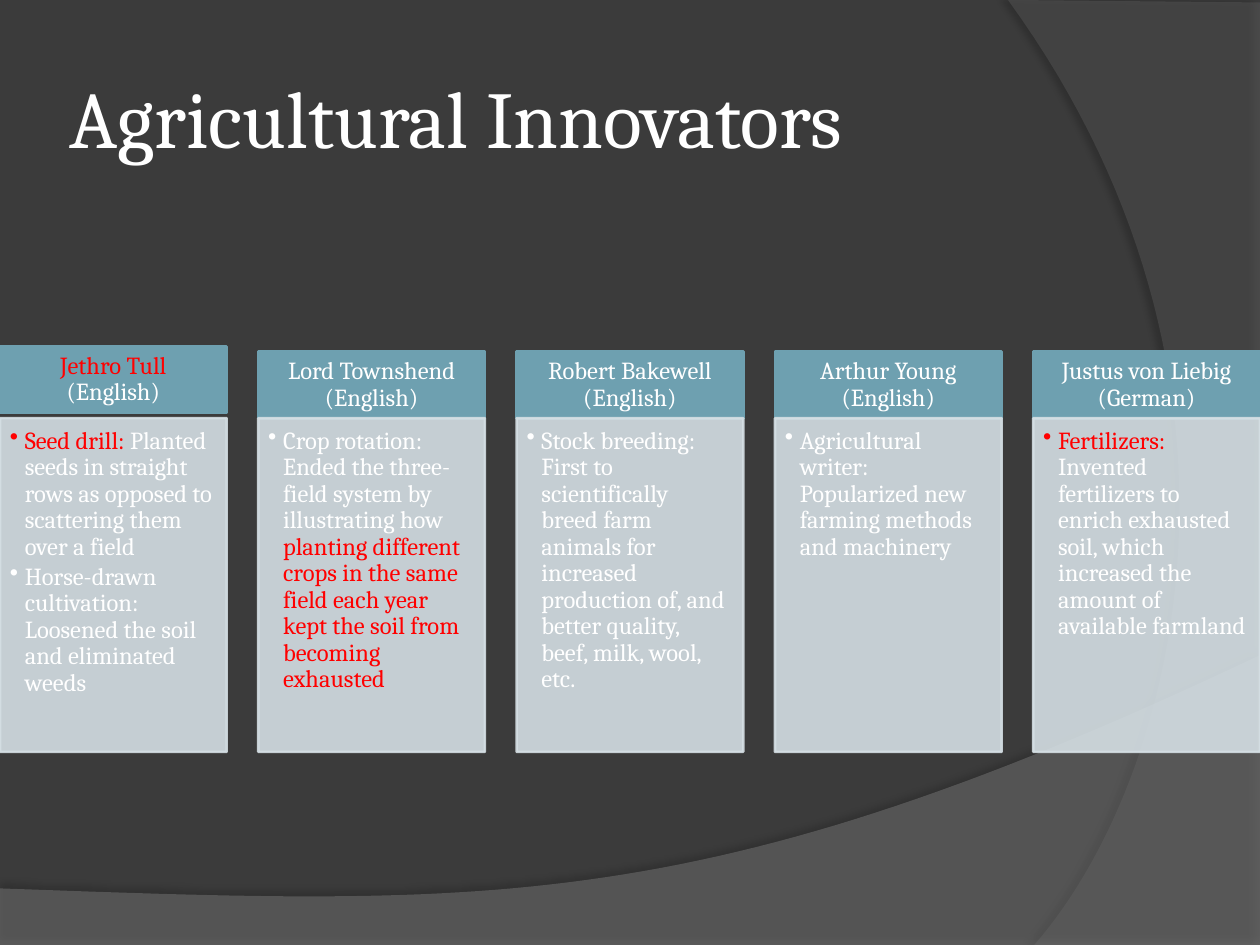
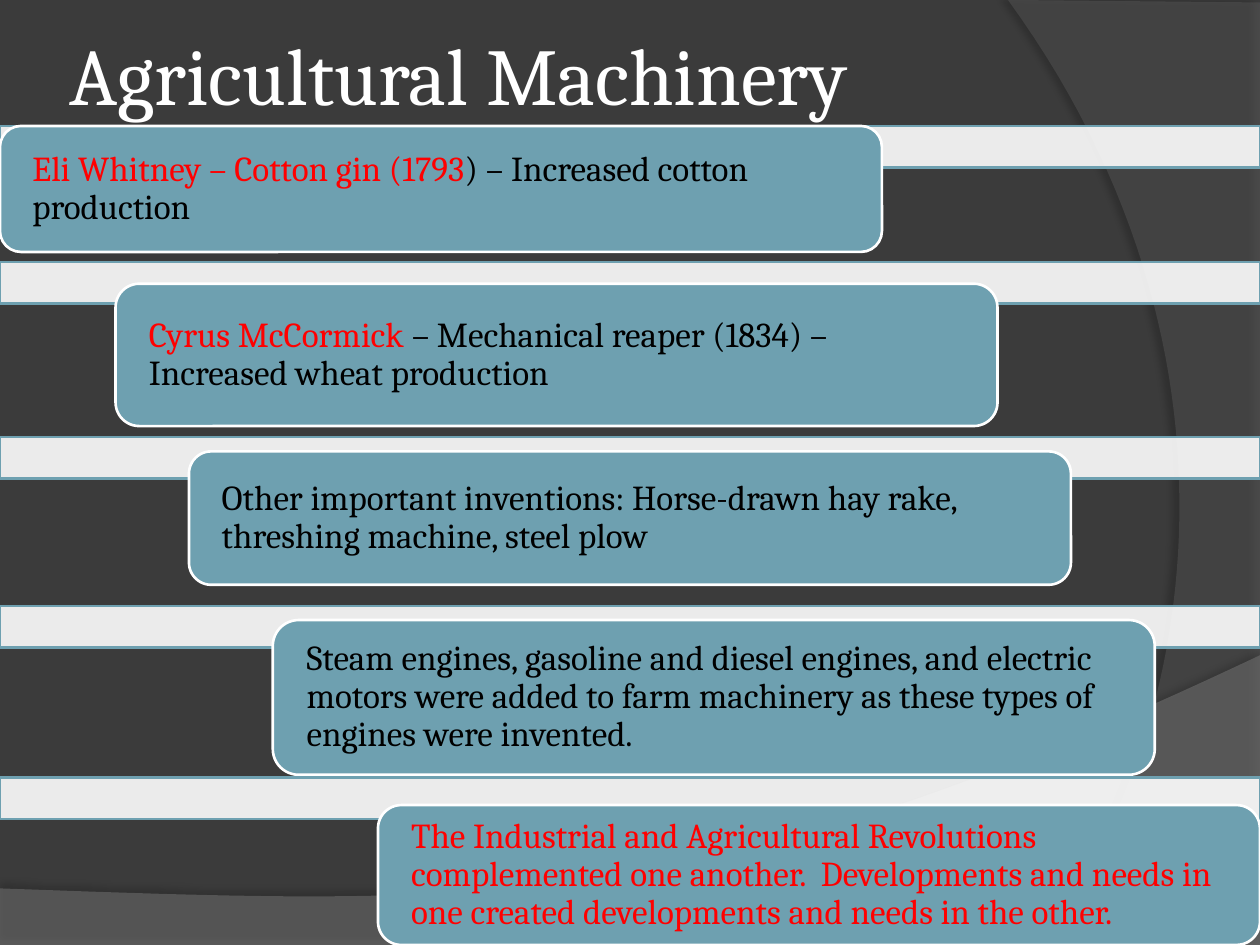
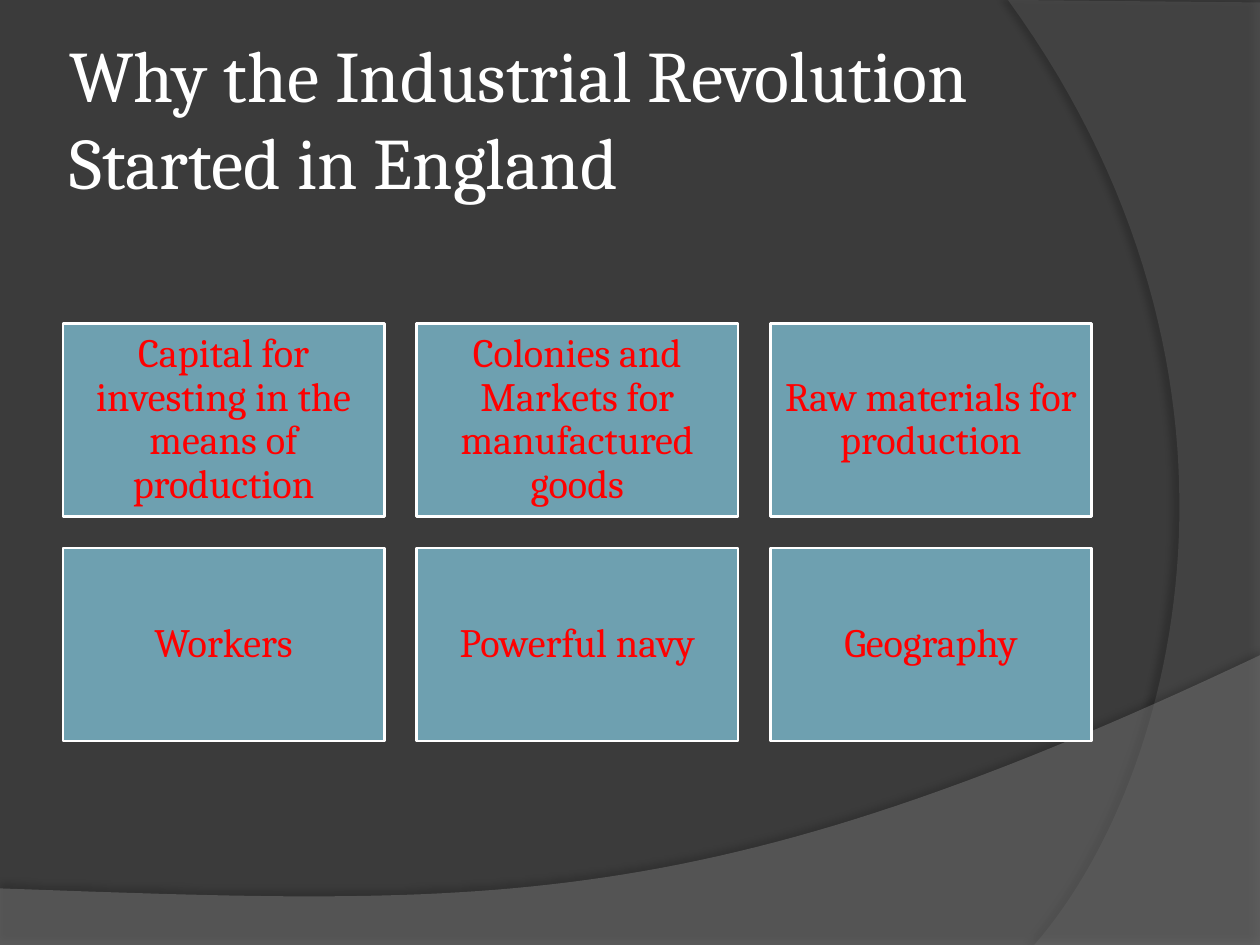
import pptx
import pptx.util
import pptx.dml.color
import pptx.enum.shapes
import pptx.enum.text
import pptx.oxml
import pptx.oxml.ns
from lxml import etree

Cm, Pt = pptx.util.Cm, pptx.util.Pt
RGB = pptx.dml.color.RGBColor
SHAPE = pptx.enum.shapes.MSO_SHAPE
ALIGN = pptx.enum.text.PP_ALIGN
ANCHOR = pptx.enum.text.MSO_ANCHOR
qn = pptx.oxml.ns.qn

FONT = "Cambria"
WIDTH, HEIGHT = 25.4, 19.05
COLORS = {
    "back": "3B3B3B", "wave": "7F7F7F", "arc": "5E5E5E", "shadow": "000000",
    "teal": "6EA0B0", "pale": "D5DFE4",
    "white": "FFFFFF", "black": "000000", "red": "FF0000",
}


def bezier(p0, p1, p2, p3, steps=60):
    """Points along a cubic curve, without its start."""
    points = []
    for i in range(1, steps + 1):
        t = i / steps
        weights = ((1 - t) ** 3, 3 * t * (1 - t) ** 2, 3 * t ** 2 * (1 - t), t ** 3)
        points.append(tuple(sum(w * p[axis] for w, p in zip(weights, (p0, p1, p2, p3)))
                            for axis in (0, 1)))
    return points


class Deck:
    def __init__(self):
        self.prs = pptx.Presentation()
        self.prs.slide_width, self.prs.slide_height = Cm(WIDTH), Cm(HEIGHT)
        self.s = None
        fill = self.prs.slide_master.background.fill
        fill.solid()
        fill.fore_color.rgb = self.rgb("back")

    def rgb(self, name):
        return RGB.from_string(COLORS[name])

    def set_alpha(self, fill_parent, percent):
        color = fill_parent.find(qn("a:solidFill"))[0]
        etree.SubElement(color, qn("a:alpha"), val=str(percent * 1000))

    def slide(self, title, top=0.76, height=3.18, size=46):
        self.s = self.prs.slides.add_slide(self.prs.slide_layouts[5])
        sp = self.s.shapes.title
        sp.left, sp.top, sp.width, sp.height = Cm(1.27), Cm(top), Cm(20.75), Cm(height)
        sp.text_frame.auto_size = pptx.enum.text.MSO_AUTO_SIZE.NONE
        self.frame(sp, (0.13,) * 4, ANCHOR.MIDDLE)
        self.paragraph(sp.text_frame.paragraphs[0], [(title, "white")], size, ALIGN.LEFT, 1)

    def master_swoosh(self, points, color, alpha, shadow_alpha, distance, direction):
        """Draws a shadowed outline and moves it to the slide master."""
        emu = [(Cm(x), Cm(y)) for x, y in points]
        builder = self.s.shapes.build_freeform(*emu[0])
        builder.add_line_segments(emu[1:], close=True)
        sp = builder.convert_to_shape()
        self.paint(sp, color, alpha=alpha)
        effects = sp.element.spPr.find(qn("a:effectLst"))
        shadow = etree.SubElement(effects, qn("a:outerShdw"), blurRad=str(Pt(4)),
                                  dist=str(Pt(distance)), dir=str(direction * 60000),
                                  algn="ctr", rotWithShape="0")
        tint = etree.SubElement(shadow, qn("a:srgbClr"), val=COLORS["shadow"])
        etree.SubElement(tint, qn("a:alpha"), val=str(shadow_alpha * 1000))
        self.prs.slide_master.shapes.element.insert_element_before(sp.element, "p:sp")

    def paint(self, sp, fill, line=None, alpha=None, line_alpha=None):
        sp.shadow.inherit = False
        sp.fill.solid()
        sp.fill.fore_color.rgb = self.rgb(fill)
        if alpha:
            self.set_alpha(sp.element.spPr, alpha)
        if line is None:
            sp.line.fill.background()
            return
        sp.line.color.rgb = self.rgb(line)
        sp.line.width = Pt(1.5)
        if line_alpha:
            self.set_alpha(sp.element.spPr.find(qn("a:ln")), line_alpha)

    def box(self, x, y, w, h, fill, line, alpha=None, line_alpha=None, kind=SHAPE.RECTANGLE):
        sp = self.s.shapes.add_shape(kind, Cm(x), Cm(y), Cm(w), Cm(h))
        self.paint(sp, fill, line, alpha, line_alpha)
        return sp

    def frame(self, sp, insets, anchor):
        tf = sp.text_frame
        tf.word_wrap = True
        tf.vertical_anchor = anchor
        tf.margin_left, tf.margin_top, tf.margin_right, tf.margin_bottom = map(Cm, insets)

    def paragraph(self, p, runs, size, align, spacing=0.9):
        p.alignment = align
        p.line_spacing = spacing
        for text, color in runs:
            r = p.add_run()
            r.text = text
            r.font.name, r.font.size = FONT, Pt(size)
            r.font.color.rgb = self.rgb(color)

    def label(self, sp, runs, size, insets, align=ALIGN.CENTER):
        self.frame(sp, insets, ANCHOR.MIDDLE)
        self.paragraph(sp.text_frame.paragraphs[0], runs, size, align)

    def bullets(self, sp, items, size, insets):
        self.frame(sp, insets, ANCHOR.TOP)
        tf = sp.text_frame
        for i, runs in enumerate(items):
            p = tf.add_paragraph() if i else tf.paragraphs[0]
            self.paragraph(p, runs, size, ALIGN.LEFT)
            p.space_after = Pt(2)
            pPr = p._p.get_or_add_pPr()
            pPr.set("marL", str(Cm(0.3)))
            pPr.set("indent", str(-Cm(0.3)))
            etree.SubElement(pPr, qn("a:buChar"), char="•")


# Content
INNOVATORS = [
    ([("Jethro Tull ", "red"), ("(English)", "white")],
     [[("Seed drill: ", "red"),
       ("Planted seeds in straight rows as opposed to scattering them over a field", "white")],
      [("Horse-drawn cultivation: Loosened the soil and eliminated weeds", "white")]]),
    ([("Lord Townshend (English)", "white")],
     [[("Crop rotation: Ended the three-field system by illustrating how ", "white"),
       ("planting different crops in the same field each year kept the soil from "
        "becoming exhausted", "red")]]),
    ([("Robert Bakewell (English)", "white")],
     [[("Stock breeding: First to scientifically breed farm animals for increased "
        "production of, and better quality, beef, milk, wool, etc.", "white")]]),
    ([("Arthur Young (English)", "white")],
     [[("Agricultural writer: Popularized new farming methods and machinery", "white")]]),
    ([("Justus von Liebig (German)", "white")],
     [[("Fertilizers: ", "red"),
       ("Invented fertilizers to enrich exhausted soil, which increased the amount of "
        "available farmland", "white")]]),
]

# Bar top, then left, top and height of the card, then its text
MACHINERY = [
    (2.54, 0, 2.54, 2.54,
     [("Eli Whitney – Cotton gin (1793", "red"),
      (") – Increased cotton production", "black")]),
    (5.28, 2.33, 5.72, 2.87,
     [("Cyrus McCormick ", "red"),
      ("– Mechanical reaper (1834) – Increased wheat production", "black")]),
    (8.81, 3.81, 9.1, 2.69,
     [("Other important inventions: Horse-drawn hay rake, threshing machine, steel plow",
       "black")]),
    (12.22, 5.5, 12.5, 3.12,
     [("Steam engines, gasoline and diesel engines, and electric motors were added to farm "
       "machinery as these types of engines were invented.", "black")]),
    (15.67, 7.62, 16.23, 2.82,
     [("The Industrial and Agricultural Revolutions complemented one another.  Developments "
       "and needs in one created developments and needs in the other.", "red")]),
]

REASONS = [
    "Capital for investing in the means of production",
    "Colonies and Markets for manufactured goods",
    "Raw materials for production",
    "Workers", "Powerful navy", "Geography",
]


def innovators(deck):
    deck.slide("Agricultural Innovators")

    # Background shared by all slides
    wave = [(0, 17.91), (0, 19.07), (WIDTH, 19.07), (WIDTH, 13.21)]
    wave += bezier(wave[-1], (14.2, 18.52), (9.93, 18.26), wave[0])
    deck.master_swoosh(wave, "wave", 45, 35, 3.5, 270)
    arc = [(WIDTH, 0.05), (WIDTH, HEIGHT), (20.85, HEIGHT)]
    arc += bezier(arc[-1], (23.75, 15.72), (25.86, 7.62), (20.32, 0))
    deck.master_swoosh(arc, "arc", 40, 45, 4, 180)

    # One column per person
    width = 4.57
    pitch = (WIDTH - width) / (len(INNOVATORS) - 1)
    for i, (name, items) in enumerate(INNOVATORS):
        head_top = 7.09 if i else 6.98
        head = deck.box(i * pitch, head_top, width, 1.35, "teal", "teal")
        deck.label(head, name, 14, (0.28, 0.15, 0.28, 0.15))
        body = deck.box(i * pitch, 8.43, width, 6.73, "pale", "pale", 90, 90)
        deck.bullets(body, items, 14, (0.2, 0.2, 0.28, 0.3))


def machinery(deck):
    deck.slide("Agricultural Machinery", top=0, height=2.97)
    for bar_top, left, top, height, runs in MACHINERY:
        deck.box(0, bar_top, WIDTH, 0.84, "white", "teal", 90)
        card = deck.box(left, top, 17.78, height, "teal", "white",
                        kind=SHAPE.ROUNDED_RECTANGLE)
        deck.label(card, runs, 20, (0.53, 0, 0.53, 0), ALIGN.LEFT)


def reasons(deck):
    deck.slide("Why the Industrial Revolution Started in England", size=41.4)
    for i, reason in enumerate(REASONS):
        row, column = divmod(i, 3)
        tile = deck.box(1.27 + column * 7.13, 6.52 + row * 4.53, 6.48, 3.89, "teal", "white")
        deck.label(tile, [(reason, "red")], 23, (0.25,) * 4)


def main():
    deck = Deck()
    innovators(deck)
    machinery(deck)
    reasons(deck)
    deck.prs.save("out.pptx")


if __name__ == "__main__":
    main()
